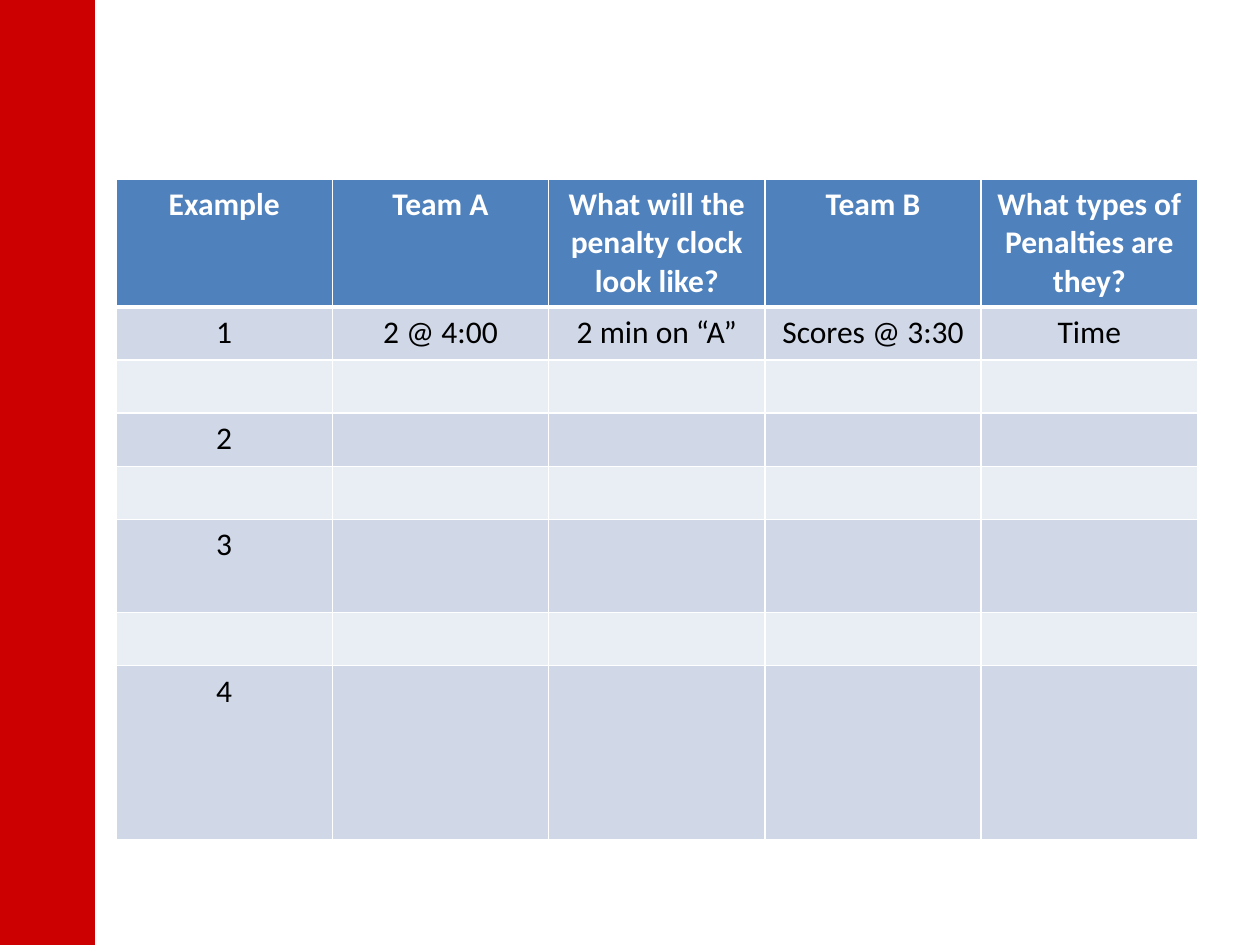
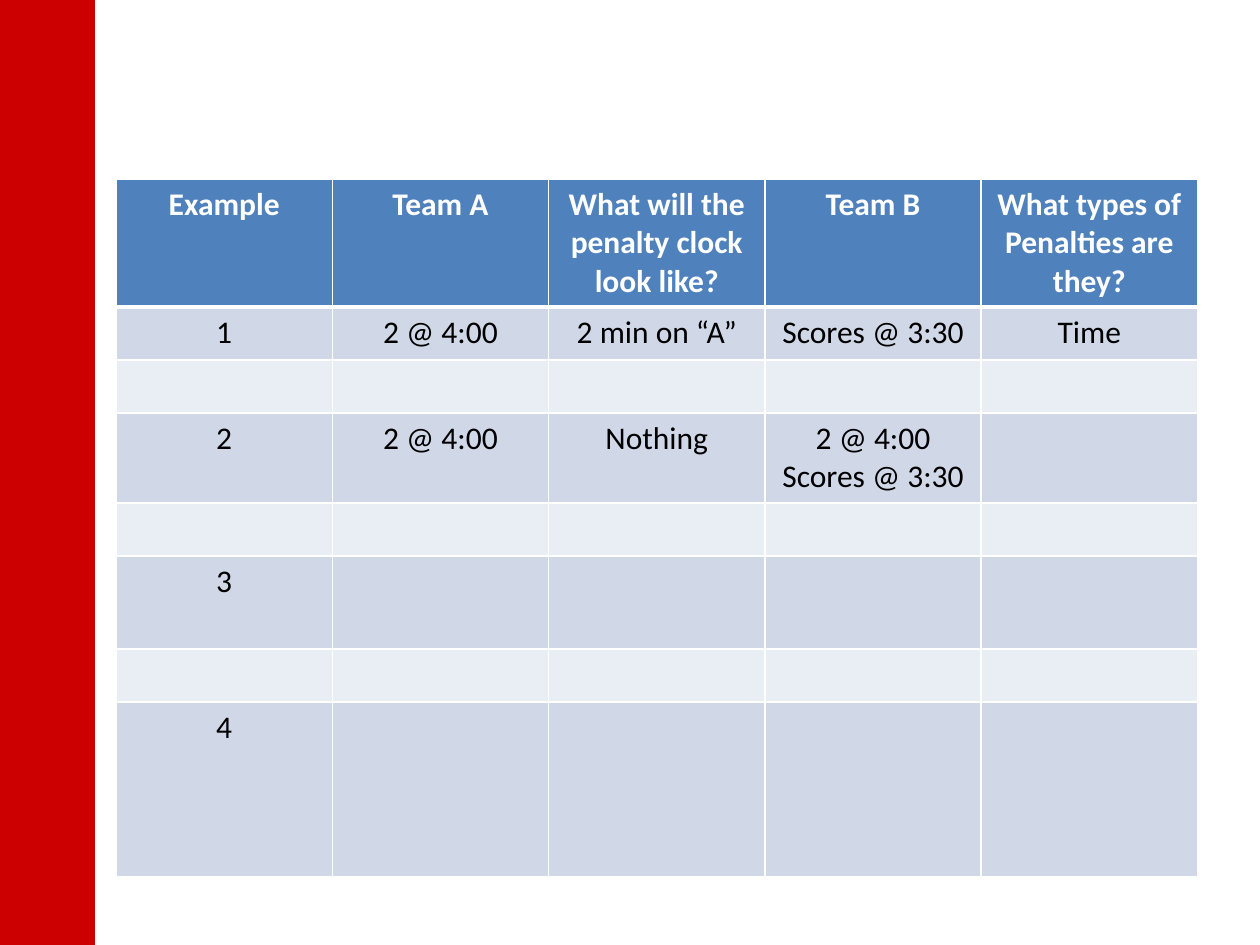
from dataclasses import dataclass

from pptx import Presentation
from pptx.dml.color import RGBColor as RGB
from pptx.enum.shapes import MSO_SHAPE as SHAPE
from pptx.enum.text import PP_ALIGN as ALIGN
from pptx.oxml import parse_xml
from pptx.oxml.ns import nsdecls
from pptx.util import Cm, Pt


@dataclass(frozen=True)
class Theme:
    side_band: RGB = RGB(0xCC, 0x00, 0x00)
    header: RGB = RGB(0x4F, 0x81, 0xBD)
    odd_row: RGB = RGB(0xD0, 0xD8, 0xE8)
    even_row: RGB = RGB(0xE9, 0xED, 0xF4)
    white: RGB = RGB(0xFF, 0xFF, 0xFF)
    black: RGB = RGB(0x00, 0x00, 0x00)
    font: str = "Calibri"
    size: Pt = Pt(18)
    rule: Pt = Pt(1)
    header_rule: Pt = Pt(3)


theme = Theme()

# Content: examples are separated by empty rows
headings = ["Example", "Team A", "What will the penalty clock look like?",
            "Team B", "What types of Penalties are they?"]
example_1 = ["1", "2 @ 4:00", "2 min on “A”", "Scores @ 3:30", "Time"]
example_2 = ["2", "2 @ 4:00", "Nothing", "2 @ 4:00\nScores @ 3:30"]
stages = [
    [example_1, ["2"], ["3"], ["4"]],
    [example_1, example_2, ["3"], ["4"]],
]

# Table grid
table_left, table_top, column_width = Cm(2.34), Cm(3.61), Cm(4.36)
row_heights = [Cm(h) for h in (2.46, 1.07, 1.07, 1.07, 1.07, 1.88, 1.07, 3.51)]


def add_borders(cell, top, bottom):
    """Draw white rules on all four sides of a cell."""
    properties = cell._tc.get_or_add_tcPr()
    widths = {"lnL": theme.rule, "lnR": theme.rule, "lnT": top, "lnB": bottom}
    for position, (side, width) in enumerate(widths.items()):
        properties.insert(position, parse_xml(
            f'<a:{side} {nsdecls("a")} w="{width}"><a:solidFill>'
            f'<a:srgbClr val="{theme.white}"/></a:solidFill></a:{side}>'))


def write_cell(cell, text, color, bold):
    """Fill a cell with centred text, one paragraph per line."""
    for index, line in enumerate(text.split("\n")):
        frame = cell.text_frame
        paragraph = frame.add_paragraph() if index else frame.paragraphs[0]
        paragraph.alignment = ALIGN.CENTER
        paragraph.font.size = theme.size
        if line:
            run = paragraph.add_run()
            run.text = line
            run.font.name, run.font.size = theme.font, theme.size
            run.font.bold, run.font.color.rgb = bold, color


deck = Presentation()
deck.slide_width, deck.slide_height = Cm(25.4), Cm(19.05)
blank_layout = deck.slide_layouts[6]

for examples in stages:
    slide = deck.slides.add_slide(blank_layout)

    # Red band down the left edge
    side_band = slide.shapes.add_shape(SHAPE.RECTANGLE, 0, 0, Cm(1.9), deck.slide_height)
    side_band.shadow.inherit = False
    side_band.fill.solid()
    side_band.fill.fore_color.rgb = theme.side_band
    side_band.line.color.rgb = theme.side_band
    side_band.line.width = Pt(0.75)

    # Penalty table
    penalties = slide.shapes.add_table(
        len(row_heights), len(headings), table_left, table_top,
        column_width * len(headings), sum(row_heights)).table
    for column in penalties.columns:
        column.width = column_width

    for r, height in enumerate(row_heights):
        penalties.rows[r].height = height
        is_header = r == 0
        if is_header:
            texts, fill = headings, theme.header
        elif r % 2:
            texts, fill = examples[r // 2], theme.odd_row
        else:
            texts, fill = [], theme.even_row

        for c in range(len(headings)):
            cell = penalties.cell(r, c)
            cell.fill.solid()
            cell.fill.fore_color.rgb = fill
            add_borders(cell,
                        top=theme.header_rule if r == 1 else theme.rule,
                        bottom=theme.header_rule if is_header else theme.rule)
            write_cell(cell, texts[c] if c < len(texts) else "",
                       theme.white if is_header else theme.black, is_header)

deck.save("out.pptx")
